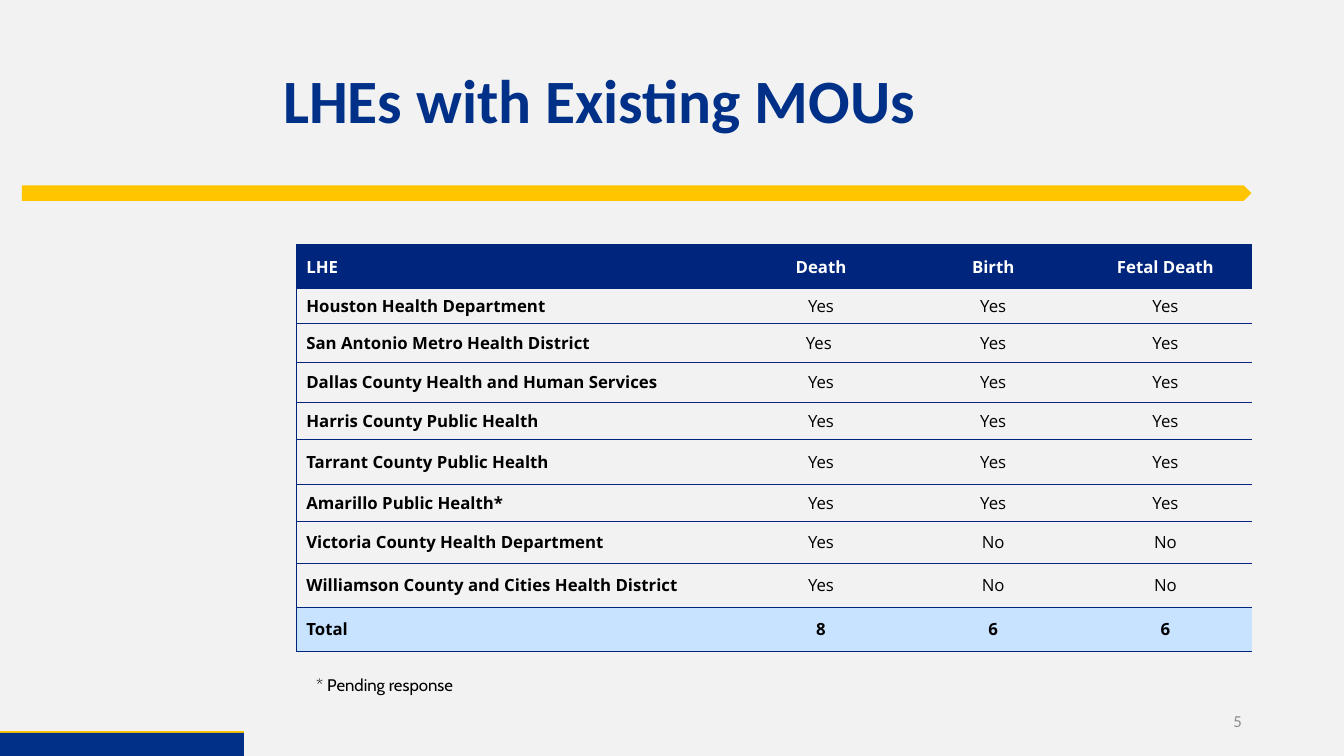
"""Build the slide that lists the LHEs with existing MOUs."""
from dataclasses import dataclass

from lxml import etree
from pptx import Presentation
from pptx.dml.color import RGBColor
from pptx.enum.shapes import MSO_CONNECTOR, MSO_SHAPE
from pptx.enum.text import MSO_ANCHOR, MSO_AUTO_SIZE, PP_ALIGN
from pptx.oxml.ns import qn
from pptx.util import Cm, Pt

PENTAGON, RECTANGLE = MSO_SHAPE.PENTAGON, MSO_SHAPE.RECTANGLE
STRAIGHT = MSO_CONNECTOR.STRAIGHT
TOP, MIDDLE = MSO_ANCHOR.TOP, MSO_ANCHOR.MIDDLE
LEFT, CENTER, RIGHT = PP_ALIGN.LEFT, PP_ALIGN.CENTER, PP_ALIGN.RIGHT
NO_FIT = MSO_AUTO_SIZE.NONE


@dataclass(frozen=True)
class Theme:
    background: str = "F2F2F2"
    blue: str = "003087"
    navy: str = "00257D"
    gold: str = "FFC600"
    pale_blue: str = "C8E3FF"
    grey: str = "8C8C8C"
    black: str = "000000"
    white: str = "FFFFFF"
    title_size: int = 44
    body_size: int = 12
    border_width: float = 0.5
    rule_width: int = 3


@dataclass(frozen=True)
class Box:
    left: float
    top: float
    width: float
    height: float

    def lengths(self) -> tuple:
        return Cm(self.left), Cm(self.top), Cm(self.width), Cm(self.height)


@dataclass(frozen=True)
class TextStyle:
    font: str
    color: str
    size: int = Theme.body_size
    bold: bool = False
    align: PP_ALIGN = LEFT
    line_spacing: float = 1.0


@dataclass(frozen=True)
class Bar:
    kind: MSO_SHAPE
    box: Box
    color: str


@dataclass(frozen=True)
class Row:
    height: float
    values: tuple
    fill: str = ""
    color: str = Theme.black
    bold: bool = False


THEME = Theme()
BARS = (
    Bar(PENTAGON, Box(0.55, 4.67, 30.99, 0.39), THEME.gold),
    Bar(RECTANGLE, Box(0, 18.47, 6.15, 0.58), THEME.blue),
)
TABLE_LEFT, TABLE_TOP = 7.47, 6.16
COLUMN_WIDTHS = (11.05, 4.34, 4.34, 4.34)
ALL_YES = ("Yes", "Yes", "Yes")
DEATH_ONLY = ("Yes", "No", "No")
ROWS = (
    Row(1.11, ("LHE", "Death", "Birth", "Fetal Death"), THEME.navy, THEME.white, True),
    Row(0.88, ("Houston Health Department", *ALL_YES)),
    Row(0.98, ("San Antonio Metro Health District", "Yes ", "Yes", "Yes")),
    Row(1.01, ("Dallas County Health and Human Services", *ALL_YES)),
    Row(0.93, ("Harris County Public Health", *ALL_YES)),
    Row(1.13, ("Tarrant County Public Health", *ALL_YES)),
    Row(0.93, ("Amarillo Public Health*", *ALL_YES)),
    Row(1.06, ("Victoria County Health Department", *DEATH_ONLY)),
    Row(1.11, ("Williamson County and Cities Health District", *DEATH_ONLY)),
    Row(1.11, ("Total", "8", "6", "6"), THEME.pale_blue, THEME.black, True),
)


def rgb(color: str) -> RGBColor:
    return RGBColor.from_string(color)


def set_attributes(target, values: dict) -> None:
    for name, value in values.items():
        setattr(target, name, value)


def write_text(text_frame, text: str, style: TextStyle) -> None:
    paragraph = text_frame.paragraphs[0]
    run = paragraph.add_run()
    run.text = text
    set_attributes(paragraph, {"alignment": style.align, "line_spacing": style.line_spacing})
    set_attributes(run.font, {"name": style.font, "size": Pt(style.size), "bold": style.bold})
    run.font.color.rgb = rgb(style.color)


def place_title(slide, text: str, box: Box, style: TextStyle) -> None:
    title = slide.shapes.title
    set_attributes(title, dict(zip(("left", "top", "width", "height"), box.lengths())))
    set_attributes(title.text_frame, {
        "word_wrap": True, "auto_size": NO_FIT, "vertical_anchor": MIDDLE})
    write_text(title.text_frame, text, style)


def add_text(slide, text: str, box: Box, style: TextStyle, anchor: MSO_ANCHOR) -> None:
    text_frame = slide.shapes.add_textbox(*box.lengths()).text_frame
    set_attributes(text_frame, {"word_wrap": True, "vertical_anchor": anchor})
    write_text(text_frame, text, style)


def add_bar(slide, bar: Bar) -> None:
    shape = slide.shapes.add_shape(bar.kind, *bar.box.lengths())
    shape.shadow.inherit = False
    shape.fill.solid()
    shape.fill.fore_color.rgb = rgb(bar.color)
    shape.line.fill.background()


def add_rule(slide, box: Box) -> None:
    left, top, width, height = box.lengths()
    rule = slide.shapes.add_connector(STRAIGHT, left, top, left + width, top + height)
    rule.line.color.rgb = rgb(THEME.gold)
    rule.line.width = Pt(THEME.rule_width)
    etree.SubElement(rule._element.spPr, qn("a:effectLst"))


def set_borders(cell, visible: str) -> None:
    properties = cell._tc.get_or_add_tcPr()
    for position, side in enumerate("LRTB"):
        border = etree.Element(qn(f"a:ln{side}"), w=str(Pt(THEME.border_width)))
        if side in visible:
            fill = etree.SubElement(border, qn("a:solidFill"))
            etree.SubElement(fill, qn("a:srgbClr"), val=THEME.navy)
        else:
            etree.SubElement(border, qn("a:noFill"))
        properties.insert(position, border)


def format_cell(cell, text: str, row: Row, is_label: bool) -> None:
    set_attributes(cell, {
        "vertical_anchor": MIDDLE, "margin_left": Cm(0.25), "margin_right": Cm(0.25),
        "margin_top": 0, "margin_bottom": 0})
    if row.fill:
        cell.fill.solid()
        cell.fill.fore_color.rgb = rgb(row.fill)
    else:
        cell.fill.background()
    set_borders(cell, "LTB" if is_label else "TB")
    write_text(cell.text_frame, text, TextStyle(
        "Open Sans", row.color, bold=row.bold or is_label,
        align=LEFT if is_label else CENTER))


def add_mou_table(slide) -> None:
    box = Box(TABLE_LEFT, TABLE_TOP, sum(COLUMN_WIDTHS), sum(row.height for row in ROWS))
    table = slide.shapes.add_table(len(ROWS), len(COLUMN_WIDTHS), *box.lengths()).table
    set_attributes(table, {"first_row": True, "horz_banding": False})
    for column, width in zip(table.columns, COLUMN_WIDTHS):
        column.width = Cm(width)
    for table_row, row in zip(table.rows, ROWS):
        table_row.height = Cm(row.height)
        for index, text in enumerate(row.values):
            format_cell(table_row.cells[index], text, row, index == 0)


def main() -> None:
    presentation = Presentation()
    set_attributes(presentation, {"slide_width": Cm(33.87), "slide_height": Cm(19.05)})
    slide = presentation.slides.add_slide(presentation.slide_layouts[5])
    slide.background.fill.solid()
    slide.background.fill.fore_color.rgb = rgb(THEME.background)
    add_rule(slide, Box(0, 18.47, 6.15, 0))
    for bar in BARS:
        add_bar(slide, bar)
    place_title(slide, "LHEs with Existing MOUs", Box(6.88, 0.76, 25.68, 3.68), TextStyle(
        "Calibri", THEME.blue, THEME.title_size, bold=True, line_spacing=0.9))
    add_text(slide, "5", Box(23.93, 17.65, 7.62, 1.02),
             TextStyle("Calibri", THEME.grey, align=RIGHT), MIDDLE)
    add_mou_table(slide)
    add_text(slide, "* Pending response", Box(7.72, 16.89, 11.38, 0.76),
             TextStyle("Cabin", THEME.black), TOP)
    presentation.save("out.pptx")


if __name__ == "__main__":
    main()
